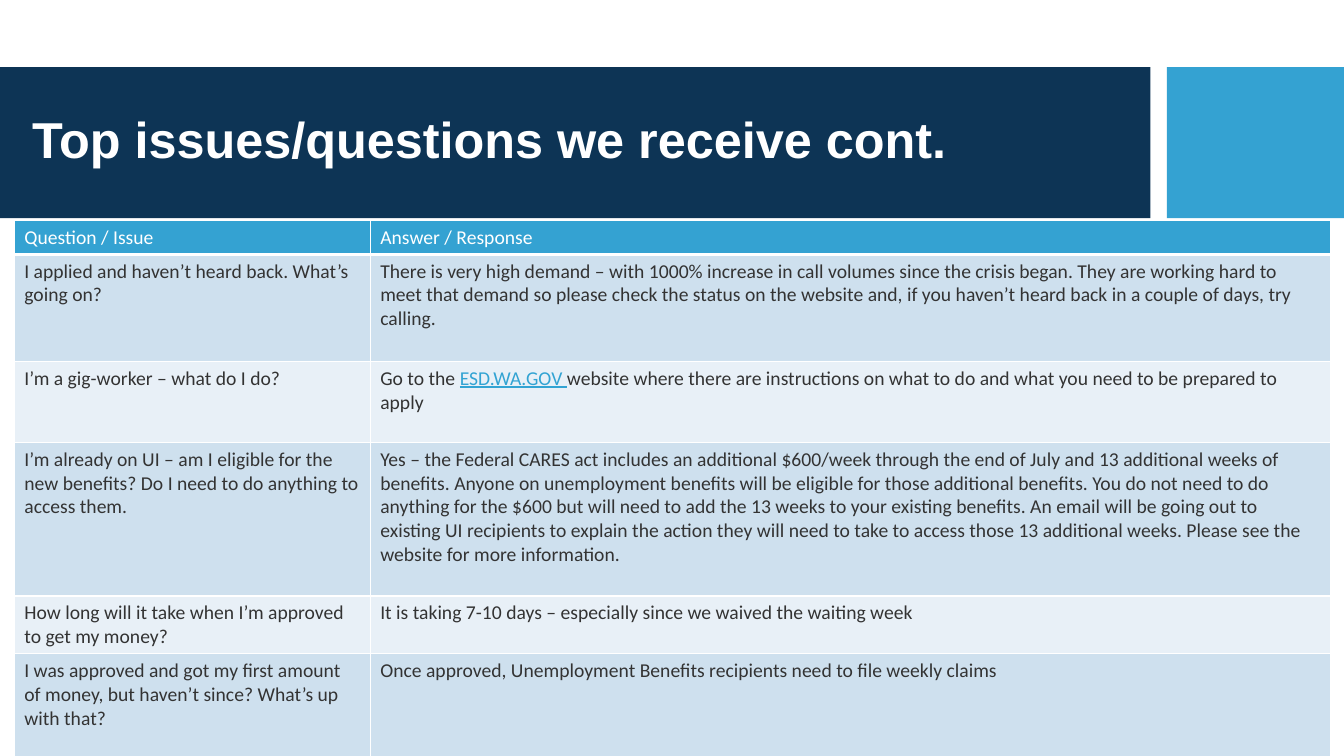
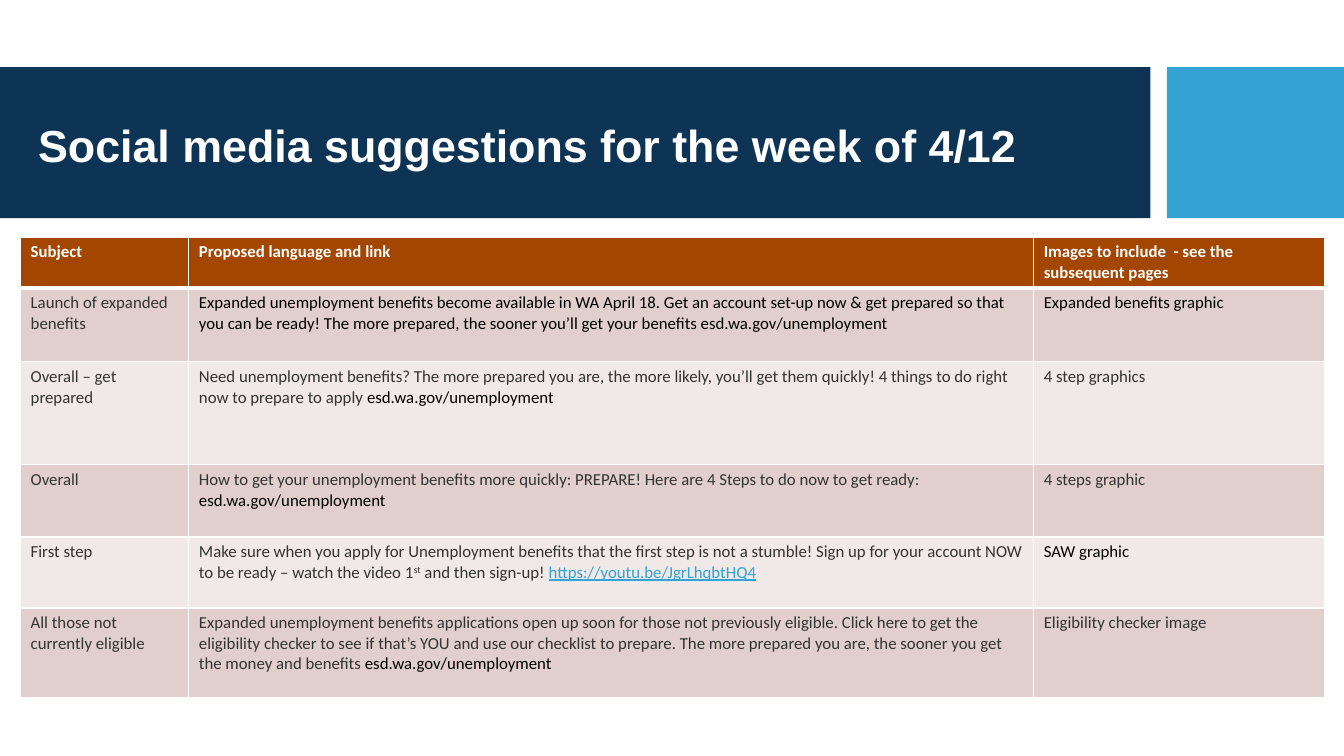
"""Build two unemployment-benefit slides, each a banded title over a table."""
from lxml.etree import SubElement
from pptx import Presentation
from pptx.dml.color import RGBColor
from pptx.enum.shapes import MSO_SHAPE
from pptx.enum.text import MSO_ANCHOR
from pptx.oxml.ns import qn
from pptx.util import Cm, Pt

NAVY = RGBColor(0x0D, 0x34, 0x55)
SKY = RGBColor(0x34, 0xA2, 0xD2)
LINK_BLUE = RGBColor(0x32, 0xA3, 0xD3)
PALE_BLUE = RGBColor(0xCE, 0xE0, 0xEE)
PALER_BLUE = RGBColor(0xE8, 0xF0, 0xF7)
RUST = RGBColor(0xA2, 0x46, 0x00)
PALE_ROSE = RGBColor(0xE0, 0xCF, 0xCC)
PALER_ROSE = RGBColor(0xF0, 0xE9, 0xE7)
WHITE = RGBColor(0xFF, 0xFF, 0xFF)
BLACK = RGBColor(0x00, 0x00, 0x00)
CHARCOAL = RGBColor(0x33, 0x33, 0x33)

SLIDE_WIDTH, SLIDE_HEIGHT = 33.87, 19.05
BAND_TOP, BAND_HEIGHT = 1.69, 3.81
TITLE_BAND_WIDTH, ACCENT_LEFT = 28.99, 29.41

LINK = {"color": LINK_BLUE, "underline": True}
DARK = {"color": BLACK}
BENEFITS_SITE = ("esd.wa.gov/unemployment", DARK)

QUESTIONS = [
    ["Question / Issue", "Answer / Response"],
    ["I applied and haven’t heard back. What’s going on?",
     "There is very high demand – with 1000% increase in call volumes since the crisis "
     "began. They are working hard to meet that demand so please check the status on the "
     "website and, if you haven’t heard back in a couple of days, try calling."],
    ["I’m a gig-worker – what do I do?",
     ["Go to the ", ("ESD.WA.GOV ", LINK),
      "website where there are instructions on what to do and what you need to be "
      "prepared to apply"]],
    ["I’m already on UI – am I eligible for the new benefits? Do I need to do anything to "
     "access them.",
     "Yes – the Federal CARES act includes an additional $600/week through the end of July "
     "and 13 additional weeks of benefits. Anyone on unemployment benefits will be eligible "
     "for those additional benefits. You do not need to do anything for the $600 but will "
     "need to add the 13 weeks to your existing benefits. An email will be going out to "
     "existing UI recipients to explain the action they will need to take to access those "
     "13 additional weeks. Please see the website for more information."],
    ["How long will it take when I’m approved to get my money?",
     "It is taking 7-10 days – especially since we waived the waiting week"],
    ["I was approved and got my first amount of money, but haven’t since? What’s up with "
     "that?",
     "Once approved, Unemployment Benefits recipients need to file weekly claims"],
]

POSTS = [
    ["Subject", "Proposed language and link", "Images to include  - see the subsequent pages"],
    ["Launch of expanded benefits",
     [("Expanded unemployment benefits become available in WA April 18. Get an account "
       "set-up now & get prepared so that you can be ready! The more prepared, the sooner "
       "you’ll get your benefits esd.wa.gov/unemployment", DARK)],
     [("Expanded benefits graphic", DARK)]],
    ["Overall – get prepared",
     ["Need unemployment benefits? The more prepared you are, the more likely, you’ll get "
      "them quickly! 4 things to do right now to prepare to apply ", BENEFITS_SITE],
     "4 step graphics"],
    ["Overall",
     ["How to get your unemployment benefits more quickly: PREPARE! Here are 4 Steps to do "
      "now to get ready: ", BENEFITS_SITE],
     "4 steps graphic"],
    ["First step",
     ["Make sure when you apply for Unemployment benefits that the first step is not a "
      "stumble! Sign up for your account NOW to be ready – watch the video 1",
      ("st", {"superscript": True}), " and then sign-up! ",
      ("https://youtu.be/JgrLhqbtHQ4", LINK)],
     [("SAW graphic", DARK)]],
    ["All those not currently eligible",
     ["Expanded unemployment benefits applications open up soon for those not previously "
      "eligible. Click here to get the eligibility checker to see if that’s YOU and use our "
      "checklist to prepare. The more prepared you are, the sooner you get the money and "
      "benefits ", BENEFITS_SITE],
     "Eligibility checker image"],
]


def add_text(paragraph, text, *, size, color, font="Calibri", bold=False,
             underline=False, superscript=False):
    """Append one formatted run to a paragraph."""
    run = paragraph.add_run()
    run.text = text
    run.font.name = font
    run.font.size = Pt(size)
    run.font.bold = bold
    run.font.underline = underline
    run.font.color.rgb = color
    if superscript:
        run.font._element.set("baseline", "30000")


def add_band(slide, left, width, color):
    """Draw one plain block of the title strip."""
    band = slide.shapes.add_shape(MSO_SHAPE.RECTANGLE, Cm(left), Cm(BAND_TOP),
                                  Cm(width), Cm(BAND_HEIGHT))
    band.shadow.inherit = False
    band.fill.solid()
    band.fill.fore_color.rgb = color
    band.line.fill.background()


def add_title(slide, text, left, top, width, height, size):
    """Write the slide title over the navy band."""
    title = slide.shapes.add_textbox(Cm(left), Cm(top), Cm(width), Cm(height))
    frame = title.text_frame
    frame.word_wrap = True
    frame.vertical_anchor = MSO_ANCHOR.MIDDLE
    frame.paragraphs[0].line_spacing = 0.9
    add_text(frame.paragraphs[0], text, size=size, color=WHITE, font="Arial", bold=True)


def set_borders(cell, **widths):
    """Give a cell white borders with the widths named by side."""
    properties = cell._tc.get_or_add_tcPr()
    for position, (side, width) in enumerate(widths.items()):
        border = SubElement(properties, qn(f"a:ln{side}"), w=str(Pt(width)))
        fill = SubElement(border, qn("a:solidFill"))
        SubElement(fill, qn("a:srgbClr"), val=str(WHITE))
        properties.insert(position, border)


def fill_cell(cell, content, fill, **text_format):
    """Set a cell's fill and write its plain or mixed text."""
    cell.fill.solid()
    cell.fill.fore_color.rgb = fill
    pieces = [content] if isinstance(content, str) else content
    for piece in pieces:
        text, changes = (piece, {}) if isinstance(piece, str) else piece
        add_text(cell.text_frame.paragraphs[0], text, **{**text_format, **changes})


def add_grid(slide, rows, left, top, widths, heights, size, fills, header_bold=False):
    """Add a table with a header colour and two alternating row colours."""
    grid = slide.shapes.add_table(len(rows), len(widths), Cm(left), Cm(top),
                                  Cm(sum(widths)), Cm(sum(heights))).table
    for column, width in zip(grid.columns, widths):
        column.width = Cm(width)
    for row, height in zip(grid.rows, heights):
        row.height = Cm(height)
    header_fill, *row_fills = fills
    for number, contents in enumerate(rows):
        is_header = number == 0
        fill = header_fill if is_header else row_fills[(number - 1) % 2]
        for column, content in enumerate(contents):
            cell = grid.cell(number, column)
            fill_cell(cell, content, fill, size=size, bold=is_header and header_bold,
                      color=WHITE if is_header else CHARCOAL)
            set_borders(cell, L=1, R=1, T=3 if number == 1 else 1, B=3 if is_header else 1)


def add_banded_slide(deck):
    """Add a blank slide with the shared title strip."""
    slide = deck.slides.add_slide(deck.slide_layouts[6])
    add_band(slide, 0, TITLE_BAND_WIDTH, NAVY)
    add_band(slide, ACCENT_LEFT, SLIDE_WIDTH - ACCENT_LEFT, SKY)
    return slide


def main():
    """Build and save the deck."""
    deck = Presentation()
    deck.slide_width, deck.slide_height = Cm(SLIDE_WIDTH), Cm(SLIDE_HEIGHT)

    issues = add_banded_slide(deck)
    add_title(issues, "Top issues/questions we receive cont.", 0.56, 2.08, 28.04, 3, 36)
    add_grid(issues, QUESTIONS, 0.36, 5.56, [8.97, 24.21],
             [0.85, 2.7, 2.04, 3.87, 1.45, 2.7], 14, [SKY, PALE_BLUE, PALER_BLUE])

    social = add_banded_slide(deck)
    add_title(social, "Social media suggestions for the week of 4/12",
              0.71, 2.51, 26.87, 2.46, 32)
    add_grid(social, POSTS, 0.52, 5.97, [4.24, 21.29, 7.34],
             [1.28, 1.86, 2.6, 1.82, 1.79, 2.26], 12, [RUST, PALE_ROSE, PALER_ROSE],
             header_bold=True)

    deck.save("out.pptx")


if __name__ == "__main__":
    main()
